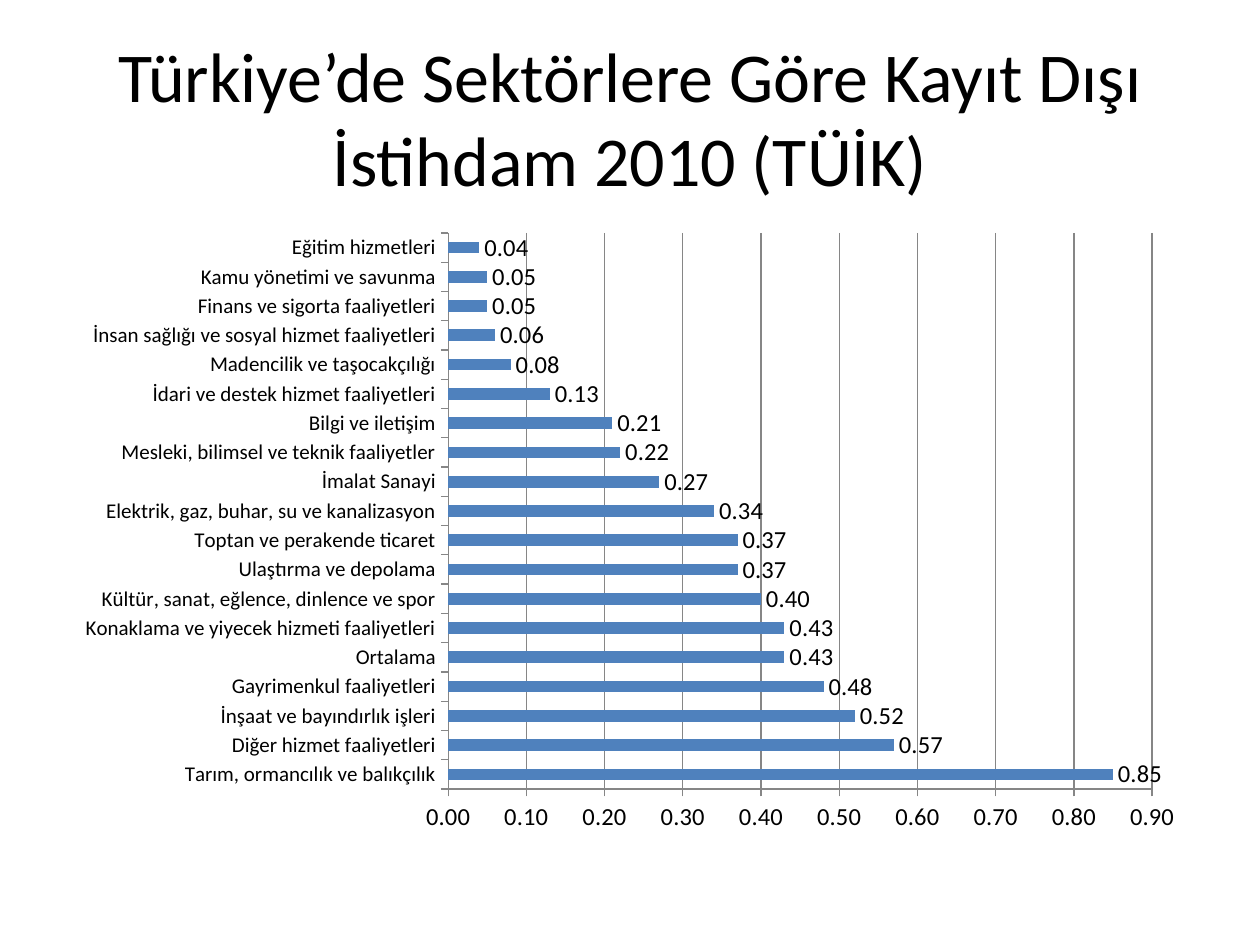
from pptx import Presentation
from pptx.chart.data import CategoryChartData
from pptx.dml.color import RGBColor
from pptx.enum.chart import XL_CHART_TYPE, XL_LABEL_POSITION, XL_TICK_MARK
from pptx.enum.text import MSO_ANCHOR, PP_ALIGN
from pptx.util import Inches, Pt

BAR_CLUSTERED = XL_CHART_TYPE.BAR_CLUSTERED
OUTSIDE_END = XL_LABEL_POSITION.OUTSIDE_END
TICK_OUTSIDE = XL_TICK_MARK.OUTSIDE
MIDDLE = MSO_ANCHOR.MIDDLE
CENTER = PP_ALIGN.CENTER

FONT = "Calibri"
COLORS = {"text": "000000", "bar": "4F81BD", "line": "868686"}
NUMBER_FORMAT = "0.00"

# Share of informal employment by sector, from the bottom bar up
SECTORS = [
    ("Tarım, ormancılık ve balıkçılık", 0.85),
    ("Diğer hizmet faaliyetleri", 0.57),
    ("İnşaat ve bayındırlık işleri", 0.52),
    ("Gayrimenkul faaliyetleri", 0.48),
    ("Ortalama", 0.43),
    ("Konaklama ve yiyecek hizmeti faaliyetleri", 0.43),
    ("Kültür, sanat, eğlence, dinlence ve spor", 0.40),
    ("Ulaştırma ve depolama", 0.37),
    ("Toptan ve perakende ticaret", 0.37),
    ("Elektrik, gaz, buhar, su ve kanalizasyon", 0.34),
    ("İmalat Sanayi", 0.27),
    ("Mesleki, bilimsel ve teknik faaliyetler", 0.22),
    ("Bilgi ve iletişim", 0.21),
    ("İdari ve destek hizmet faaliyetleri", 0.13),
    ("Madencilik ve taşocakçılığı", 0.08),
    ("İnsan sağlığı ve sosyal hizmet faaliyetleri", 0.06),
    ("Finans ve sigorta faaliyetleri", 0.05),
    ("Kamu yönetimi ve savunma", 0.05),
    ("Eğitim hizmetleri", 0.04),
]


def style_font(font, size):
    font.name = FONT
    font.size = Pt(size)
    font.color.rgb = RGBColor.from_string(COLORS["text"])


# Slide and its margins
prs = Presentation()
prs.slide_width, prs.slide_height = Inches(10), Inches(7.5)
width, height = prs.slide_width, prs.slide_height
slide = prs.slides.add_slide(prs.slide_layouts[6])
left, content_width = int(width * 0.05), int(width * 0.9)

# Title
heading = slide.shapes.add_textbox(left, int(height * 0.04), content_width, Inches(1.25))
heading_frame = heading.text_frame
heading_frame.word_wrap = True
heading_frame.vertical_anchor = MIDDLE
heading_line = heading_frame.paragraphs[0]
heading_line.text = "Türkiye’de Sektörlere Göre Kayıt Dışı İstihdam 2010 (TÜİK)"
heading_line.alignment = CENTER
style_font(heading_line.font, 40)

# Bar chart
sector_data = CategoryChartData(number_format=NUMBER_FORMAT)
sector_data.categories = [sector for sector, share in SECTORS]
sector_data.add_series("Series 1", [share for sector, share in SECTORS])
chart = slide.shapes.add_chart(
    BAR_CLUSTERED, left, Inches(1.75), content_width, int(height * 0.66), sector_data
).chart
chart.has_title = False
chart.has_legend = False
style_font(chart.font, 10)

# Bars and their values
bars = chart.plots[0]
bars.vary_by_categories = False
bars.gap_width = 150
bar_fill = bars.series[0].format.fill
bar_fill.solid()
bar_fill.fore_color.rgb = RGBColor.from_string(COLORS["bar"])
bars.has_data_labels = True
labels = bars.data_labels
labels.show_value = True
labels.position = OUTSIDE_END
labels.number_format = NUMBER_FORMAT
labels.number_format_is_linked = False
style_font(labels.font, 14)

# Axes and gridlines
sector_axis, share_axis = chart.category_axis, chart.value_axis
share_axis.minimum_scale, share_axis.maximum_scale = 0, 0.9
share_axis.major_unit = 0.1
share_axis.tick_labels.number_format = NUMBER_FORMAT
share_axis.tick_labels.number_format_is_linked = False
share_axis.has_major_gridlines = True
for axis, size in ((sector_axis, 12), (share_axis, 14)):
    axis.major_tick_mark = TICK_OUTSIDE
    style_font(axis.tick_labels.font, size)
for ruled in (sector_axis, share_axis, share_axis.major_gridlines):
    ruled.format.line.width = Pt(0.75)
    ruled.format.line.color.rgb = RGBColor.from_string(COLORS["line"])

prs.save("out.pptx")
